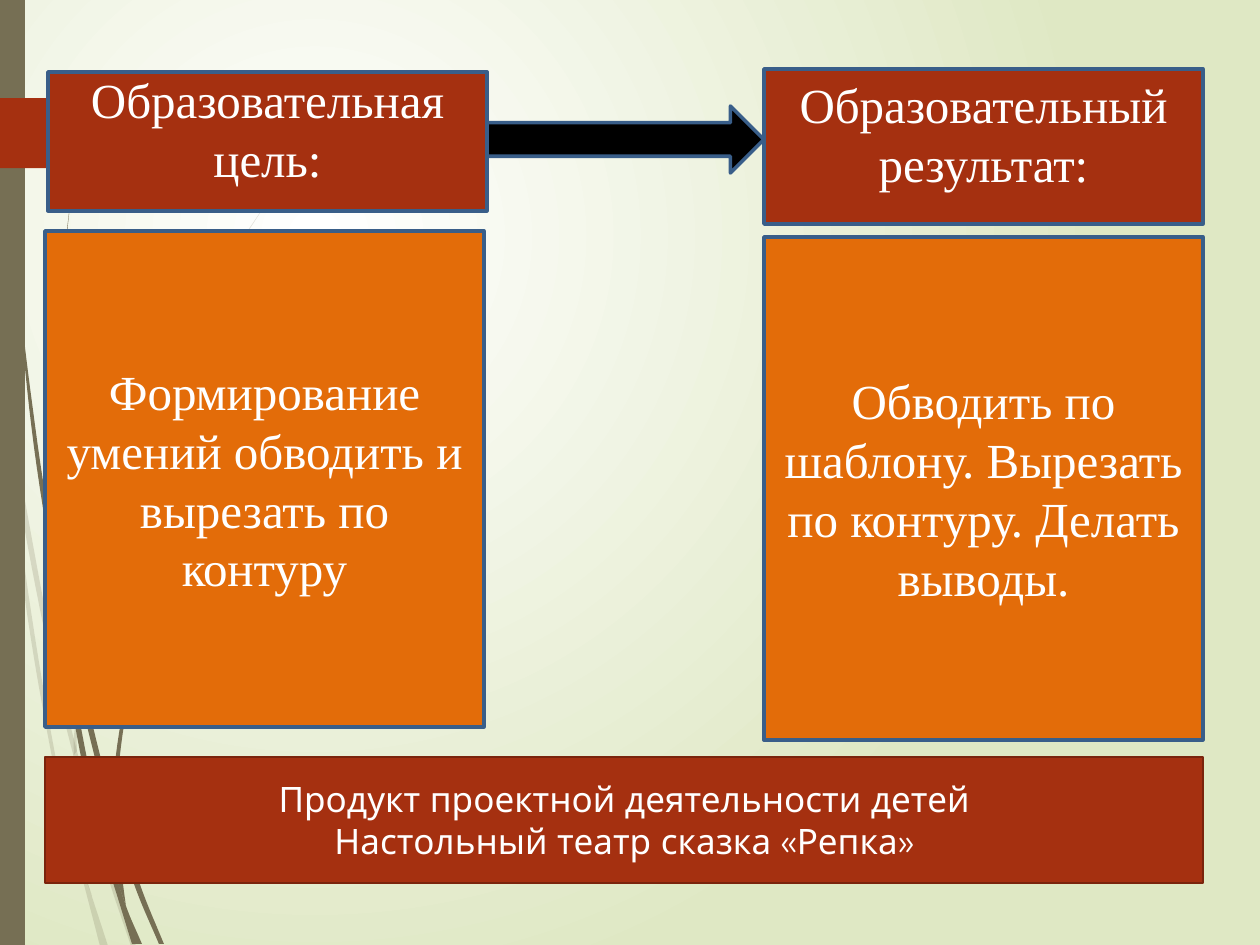
from lxml import etree
from pptx import Presentation
from pptx.dml.color import RGBColor
from pptx.enum.shapes import MSO_SHAPE
from pptx.enum.text import MSO_ANCHOR, PP_ALIGN
from pptx.oxml import parse_xml
from pptx.oxml.ns import nsdecls, qn
from pptx.util import Pt

PX = 914400 // 126
SLIDE_SIZE = (1260, 945)

THEME = {
    "white": "FFFFFF", "mist": "DFE8C4", "olive": "766F54", "brick": "A53010",
    "brick_edge": "7A240C", "orange": "E36C09", "blue_edge": "395E89",
    "black": "000000",
    "main_font": "Times New Roman", "product_font": "Quicksand",
    "main_size": 28, "product_size": 20,
}

MAIN_TYPE = {"name": THEME["main_font"], "size": Pt(THEME["main_size"])}
PRODUCT_TYPE = {"name": THEME["product_font"], "size": Pt(THEME["product_size"])}
HEADING_INSETS = {"margin_top": 0, "margin_bottom": 26 * PX}

# preset, place (left, top, width, height), fill, edge, edge width in points
DECOR = [
    (MSO_SHAPE.RECTANGLE, (0, 0, 25, 945), "olive", None, 0),
    (MSO_SHAPE.PENTAGON, (0, 98, 188, 70), "brick", None, 0),
    (MSO_SHAPE.RIGHT_ARROW, (485, 106, 279, 67), "black", "blue_edge", 2),
]

# lines of text, place, fill, edge, edge width, type, insets
CARDS = [
    (["Образовательная цель:"], (48, 72, 439, 139),
     "brick", "blue_edge", 2, MAIN_TYPE, HEADING_INSETS),
    (["Образовательный результат:"], (764, 69, 439, 155),
     "brick", "blue_edge", 2, MAIN_TYPE, HEADING_INSETS),
    (["Формирование умений обводить и вырезать по контуру"], (45, 231, 439, 496),
     "orange", "blue_edge", 2, MAIN_TYPE, {}),
    (["Обводить по шаблону. Вырезать по контуру. Делать выводы."],
     (764, 237, 439, 503), "orange", "blue_edge", 2, MAIN_TYPE, {}),
    (["Продукт проектной деятельности детей", "Настольный театр сказка «Репка»"],
     (45, 757, 1158, 126), "brick", "brick_edge", 1.25, PRODUCT_TYPE, {}),
]

# Grass blades: (left edge, right edge), both from top to bottom
FAINT_BLADES = [
    ([(13, 435), (15, 474), (50, 658), (77, 769), (107, 874), (131, 946)],
     [(13, 435), (54, 655), (77, 751), (111, 872), (136, 946)]),
    ([(10, 441), (24, 592), (57, 782), (81, 873), (100, 946)],
     [(10, 441), (28, 591), (60, 780), (81, 861), (108, 946)]),
    ([(73, 755), (76, 814), (81, 861), (92, 896)],
     [(73, 755), (79, 814), (84, 872), (92, 896)]),
    ([(273, 193), (199, 307), (139, 438), (95, 581), (74, 736), (74, 755)],
     [(273, 193), (200, 309), (140, 440), (96, 582), (77, 736), (77, 751)]),
]
DARK_BLADES = [
    ([(3, 0), (6, 139), (18, 294), (34, 447), (59, 606)],
     [(4, 0), (8, 137), (19, 292), (38, 447), (57, 571), (59, 606)]),
    ([(63, 595), (67, 636), (92, 746), (115, 827), (137, 892), (159, 944)],
     [(63, 595), (97, 743), (115, 808), (142, 890), (164, 944)]),
    ([(59, 601), (71, 702), (97, 830), (116, 892), (132, 944)],
     [(59, 601), (76, 701), (102, 828), (126, 906), (142, 944)]),
    ([(73, 178), (59, 309), (54, 440), (57, 566), (62, 595)],
     [(73, 178), (60, 309), (55, 440), (60, 571), (63, 595)]),
    ([(271, 433), (212, 511), (163, 597), (127, 694), (111, 795), (111, 811)],
     [(272, 433), (213, 512), (165, 600), (130, 696), (115, 798), (115, 808)]),
    ([(111, 813), (115, 871), (126, 906)],
     [(111, 813), (115, 827), (126, 906)]),
]


def color(key):
    return RGBColor.from_string(THEME[key])


def paint(shape, fill, edge=None, edge_width=0):
    shape.shadow.inherit = False
    shape.fill.solid()
    shape.fill.fore_color.rgb = color(fill)
    if edge:
        shape.line.color.rgb = color(edge)
        shape.line.width = Pt(edge_width)
    else:
        shape.line.fill.background()


def apply(target, values):
    for key, value in values.items():
        setattr(target, key, value)


def add_preset(slide, preset, place, *look):
    shape = slide.shapes.add_shape(preset, *(PX * n for n in place))
    paint(shape, *look)
    return shape


def smooth_edge(knots, steps=8):
    """Join the knots by cubic Hermite curves with x as a function of y."""
    last = len(knots) - 1
    slopes = []
    for i in range(last + 1):
        (x0, y0), (x1, y1) = knots[max(i - 1, 0)], knots[min(i + 1, last)]
        slopes.append((x1 - x0) / (y1 - y0))
    points = []
    for i in range(last):
        (x0, y0), (x1, y1) = knots[i], knots[i + 1]
        rise = y1 - y0
        for step in range(steps):
            t = step / steps
            x = ((2 * t**3 - 3 * t**2 + 1) * x0 + (3 * t**2 - 2 * t**3) * x1
                 + rise * ((t**3 - 2 * t**2 + t) * slopes[i]
                           + (t**3 - t**2) * slopes[i + 1]))
            points.append((x, y0 + rise * t))
    return points + [knots[-1]]


def add_blade(slide, left_edge, right_edge, opacity=100):
    outline = smooth_edge(left_edge) + smooth_edge(right_edge)[::-1]
    outline = [(round(x * PX), round(y * PX)) for x, y in outline]
    builder = slide.shapes.build_freeform(*outline[0])
    builder.add_line_segments(outline[1:], close=True)
    blade = builder.convert_to_shape()
    paint(blade, "olive")
    if opacity < 100:
        tint = next(blade.element.spPr.iter(qn("a:srgbClr")))
        etree.SubElement(tint, qn("a:alpha"), val=str(opacity * 1000))


def set_background(slide):
    """Fill with a round gradient centred in the upper left quarter."""
    fill = slide.background.fill
    fill.gradient()
    for stop, key in zip(fill.gradient_stops, ("white", "mist")):
        stop.color.rgb = color(key)
    gradient = next(slide.element.iter(qn("a:gradFill")))
    gradient.replace(gradient.find(qn("a:lin")), parse_xml(
        f'<a:path {nsdecls("a")} path="circle">'
        '<a:fillToRect l="50000" t="50000" r="100000" b="100000"/></a:path>'))
    for stop, position in zip(fill.gradient_stops, (0, 1)):
        stop.position = position


def add_card(slide, lines, place, fill, edge, edge_width, type_style, insets):
    frame = add_preset(slide, MSO_SHAPE.RECTANGLE, place,
                       fill, edge, edge_width).text_frame
    apply(frame, {"word_wrap": True, "vertical_anchor": MSO_ANCHOR.MIDDLE, **insets})
    for i, line in enumerate(lines):
        paragraph = frame.add_paragraph() if i else frame.paragraphs[0]
        paragraph.alignment = PP_ALIGN.CENTER
        run = paragraph.add_run()
        run.text = line
        apply(run.font, type_style)
        run.font.color.rgb = color("white")


def main():
    deck = Presentation()
    deck.slide_width, deck.slide_height = (PX * n for n in SLIDE_SIZE)
    slide = deck.slides.add_slide(deck.slide_layouts[6])
    set_background(slide)
    for blades, opacity in ((FAINT_BLADES, 20), (DARK_BLADES, 100)):
        for edges in blades:
            add_blade(slide, *edges, opacity)
    for decor in DECOR:
        add_preset(slide, *decor)
    for card in CARDS:
        add_card(slide, *card)
    deck.save("out.pptx")


if __name__ == "__main__":
    main()
